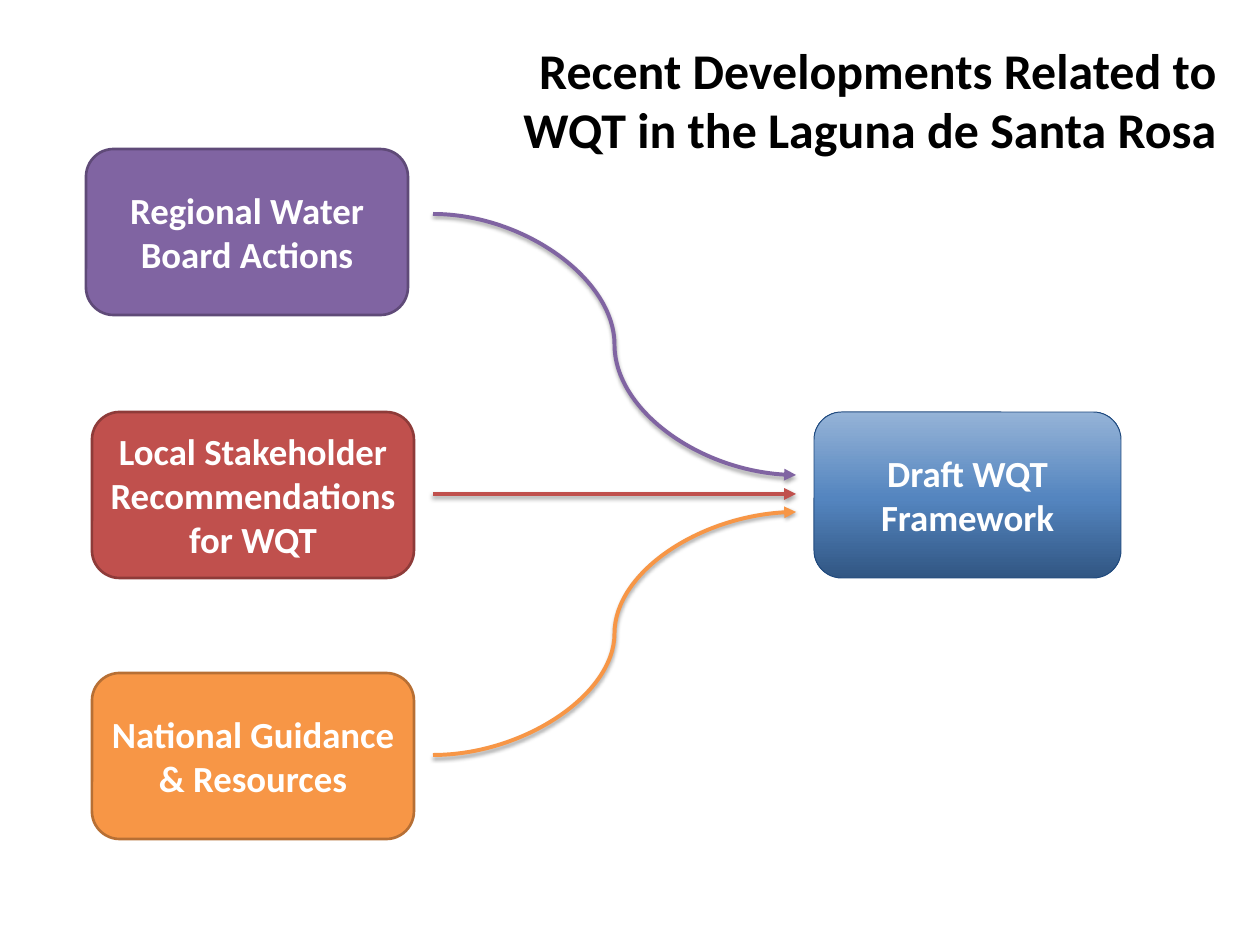
import copy

import lxml.etree
import pptx
import pptx.dml.color
import pptx.enum.shapes
import pptx.enum.text
import pptx.oxml
import pptx.oxml.ns
import pptx.util

EMU_PER_PX = 9666
FONT = "Calibri"
WHITE, BLACK = "FFFFFF", "000000"
PURPLE, RED, ORANGE = "8064A2", "C0504D", "F79646"
FRAMEWORK_STOPS = [(0, "315683"), (0.48, "5485BF"), (1, "95B3D7")]

SHADOW_XML = (
    f'<a:effectLst {pptx.oxml.ns.nsdecls("a")}>'
    '<a:outerShdw blurRad="40000" dist="23000" dir="5400000" rotWithShape="0">'
    '<a:srgbClr val="000000"><a:alpha val="35000"/></a:srgbClr>'
    '</a:outerShdw></a:effectLst>'
)


def px(length):
    return pptx.util.Emu(length * EMU_PER_PX)


def color(hex_value):
    return pptx.dml.color.RGBColor.from_string(hex_value)


def write_text(frame, text, size, hex_value, alignment):
    frame.word_wrap = True
    frame.vertical_anchor = pptx.enum.text.MSO_ANCHOR.MIDDLE
    frame.text = text
    paragraph = frame.paragraphs[0]
    paragraph.alignment = alignment
    paragraph.font.name = FONT
    paragraph.font.size = pptx.util.Pt(size)
    paragraph.font.bold = True
    paragraph.font.color.rgb = color(hex_value)


def add_title(slide, box, text):
    title = slide.shapes.title
    title.left, title.top, title.width, title.height = map(px, box)
    frame = title.text_frame
    write_text(frame, text, 38, BLACK, pptx.enum.text.PP_ALIGN.RIGHT)
    frame.auto_size = pptx.enum.text.MSO_AUTO_SIZE.NONE
    frame.margin_left = frame.margin_right = px(12)
    frame.margin_top = frame.margin_bottom = px(7)


def add_card(slide, box, text, outline, outline_width):
    card = slide.shapes.add_shape(
        pptx.enum.shapes.MSO_SHAPE.ROUNDED_RECTANGLE, *map(px, box))
    card.shadow.inherit = False
    card.line.color.rgb = color(outline)
    card.line.width = pptx.util.Pt(outline_width)
    write_text(card.text_frame, text, 28, WHITE, pptx.enum.text.PP_ALIGN.CENTER)
    return card


def add_input(slide, box, text, fill, outline):
    card = add_card(slide, box, text, outline, 2)
    card.fill.solid()
    card.fill.fore_color.rgb = color(fill)


def add_framework(slide, box, text):
    card = add_card(slide, box, text, "1F497D", 0.75)
    card.fill.gradient()
    card.fill.gradient_angle = 90
    # A new gradient has two stops; the third is a copy of the last
    stop_list = card._element.spPr.find(".//" + pptx.oxml.ns.qn("a:gsLst"))
    stop_list.append(copy.deepcopy(stop_list[-1]))
    for stop, (position, hex_value) in zip(card.fill.gradient_stops, FRAMEWORK_STOPS):
        stop.position = position
        stop.color.rgb = color(hex_value)


def add_arrow(slide, kind, start, end, hex_value):
    arrow = slide.shapes.add_connector(kind, *map(px, start + end))
    arrow.line.color.rgb = color(hex_value)
    arrow.line.width = pptx.util.Pt(3)
    lxml.etree.SubElement(
        arrow.line._get_or_add_ln(), pptx.oxml.ns.qn("a:tailEnd"), type="triangle")
    arrow._element.spPr.append(pptx.oxml.parse_xml(SHADOW_XML))


def add_flow(slide, box):
    left, top, width, height = box
    card_height = 166
    straight = pptx.enum.shapes.MSO_CONNECTOR.STRAIGHT
    curve = pptx.enum.shapes.MSO_CONNECTOR.CURVE

    # Inputs: indent, top, text, fill, outline, arrow kind, arrow start and end
    inputs = [
        (0, 0, "Regional Water Board Actions", PURPLE, "5F4A78", curve, 65, 326),
        (6, 263, "Local Stakeholder Recommendations for WQT", RED, "8E3B39",
         straight, 345, 345),
        (6, 524, "National Guidance & Resources", ORANGE, "B76F34", curve, 606, 363),
    ]
    for indent, offset, text, fill, outline, kind, start_y, end_y in inputs:
        add_input(slide, (left + indent, top + offset, 322, card_height),
                  text, fill, outline)
        add_arrow(slide, kind, (left + 347, top + start_y),
                  (left + 710, top + end_y), fill)

    # Outcome, flush with the right edge
    add_framework(slide, (left + width - 307, top + 263, 307, card_height),
                  "Draft WQT Framework")


def main():
    presentation = pptx.Presentation()
    presentation.slide_width = px(1260)
    presentation.slide_height = px(945)
    slide = presentation.slides.add_slide(presentation.slide_layouts[5])
    add_flow(slide, (86, 149, 1035, 690))
    add_title(slide, (496, 2, 733, 194),
              "Recent Developments Related to WQT in the Laguna de Santa Rosa")
    presentation.save("out.pptx")


if __name__ == "__main__":
    main()
